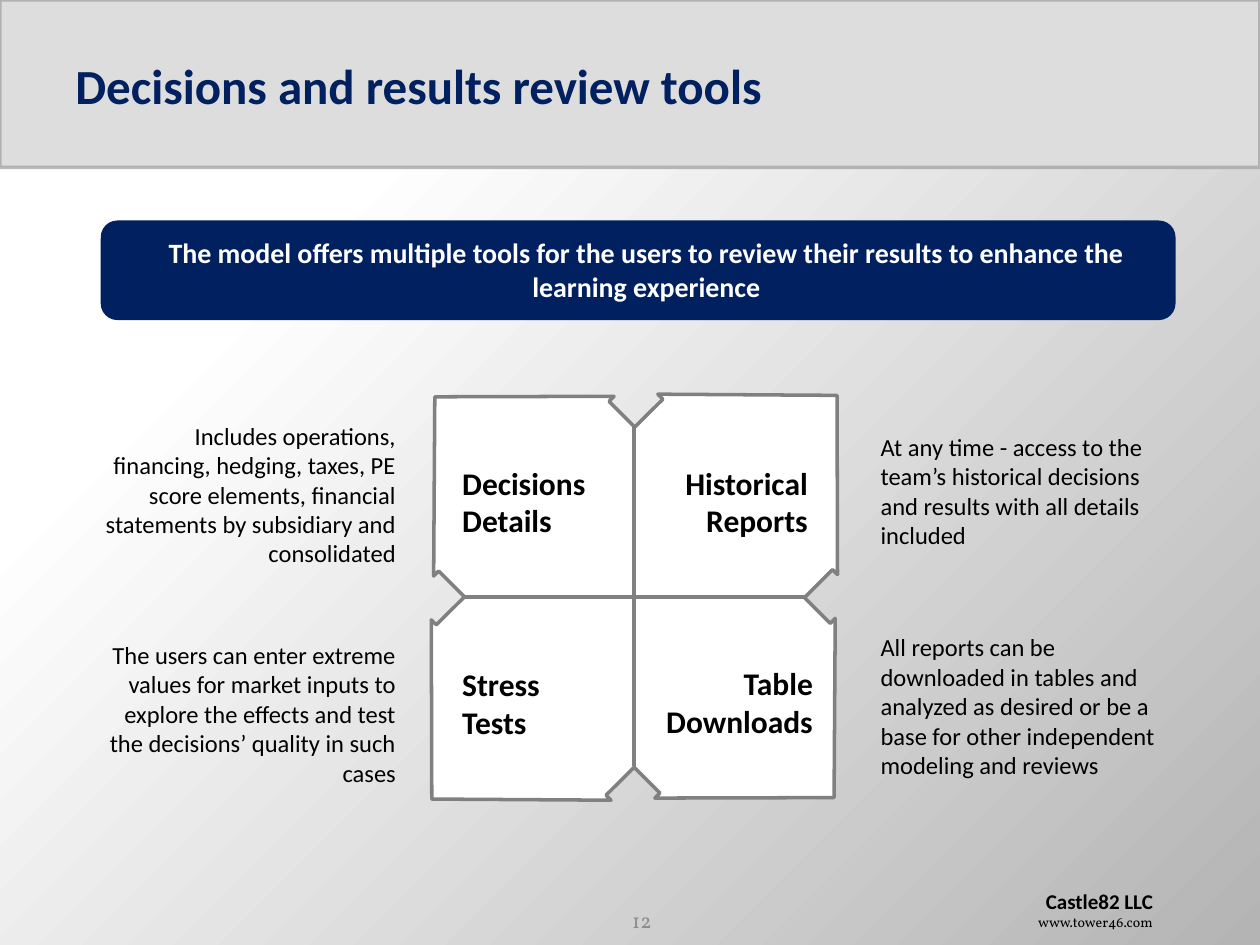
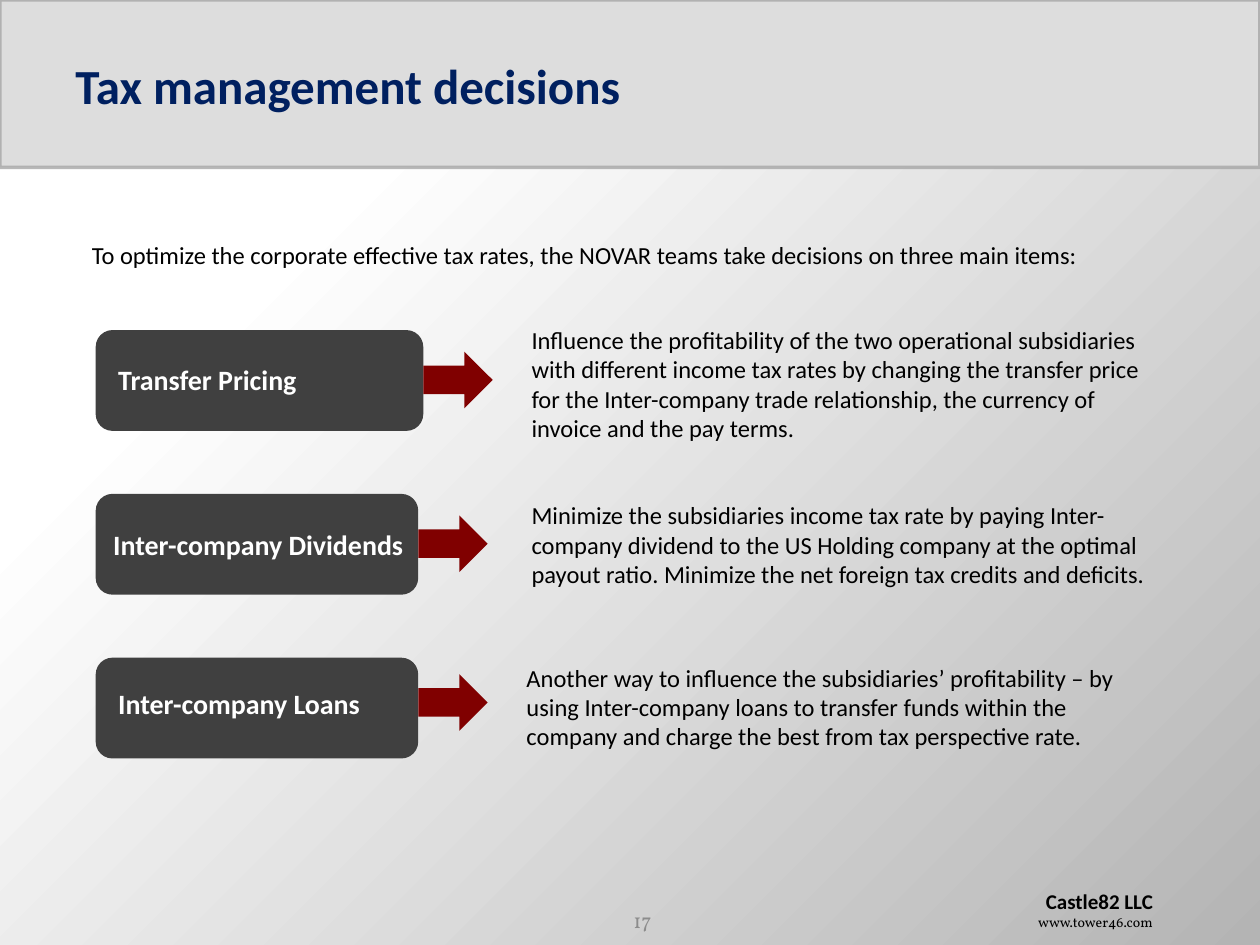
from lxml import etree
from pptx import Presentation
from pptx.dml.color import RGBColor
from pptx.enum import shapes, text
from pptx.oxml import parse_xml
from pptx.oxml.ns import nsdecls, qn
from pptx.util import Inches, Pt

# Shared look
NAVY = RGBColor(0x00, 0x20, 0x60)
BLACK = RGBColor(0x00, 0x00, 0x00)
WHITE = RGBColor(0xFF, 0xFF, 0xFF)
BAND_FILL = RGBColor(0xDD, 0xDD, 0xDD)
BAND_EDGE = RGBColor(0xA6, 0xA6, 0xA6)
MID_GREY = RGBColor(0x80, 0x80, 0x80)
NUMBER_GREY = RGBColor(0x8C, 0x8C, 0x8C)
DARK_GREY = RGBColor(0x40, 0x40, 0x40)
DARK_RED = RGBColor(0x80, 0x00, 0x00)
BODY_FONT = "Calibri"
SERIF_FONT = "Vollkorn"
LEFT, CENTER, RIGHT = (text.PP_ALIGN.LEFT, text.PP_ALIGN.CENTER,
                       text.PP_ALIGN.RIGHT)
PRESET = shapes.MSO_SHAPE
BACKGROUND = f"""<p:bg {nsdecls('p', 'a')}><p:bgPr>
<a:gradFill rotWithShape="1"><a:gsLst>
<a:gs pos="24000"><a:srgbClr val="FFFFFF"/></a:gs>
<a:gs pos="100000"><a:srgbClr val="B4B4B4"/></a:gs></a:gsLst>
<a:path path="circle"><a:fillToRect r="100000" b="100000"/></a:path>
</a:gradFill><a:effectLst/></p:bgPr></p:bg>"""

# Content
COMPANY = "Castle82 LLC"
WEB_ADDRESS = "www.tower46.com"

REVIEW_TITLE = "Decisions and results review tools"
REVIEW_MESSAGE = ("The model offers multiple tools for the users to review "
                  "their results to enhance the learning experience")
# Label, its box; description, its box; alignment of label and description
REVIEW_TOOLS = [
    ("Decisions Details", (3.57, 3.63, 1.34, 0.71),
     "Includes operations, financing, hedging, taxes, PE score elements, "
     "financial statements by subsidiary and consolidated",
     (0.72, 3.29, 2.52, 1.28), LEFT, RIGHT),
    ("Historical Reports", (5.17, 3.63, 1.34, 0.71),
     "At any time - access to the team’s historical decisions and results "
     "with all details included",
     (6.89, 3.38, 2.52, 1.04), RIGHT, LEFT),
    ("Stress Tests", (3.57, 5.23, 1.34, 0.71),
     "The users can enter extreme values for market inputs to explore the "
     "effects and test the decisions’ quality in such cases",
     (0.72, 5.03, 2.52, 1.28), LEFT, RIGHT),
    ("Table Downloads", (5.04, 5.22, 1.51, 0.71),
     "All reports can be downloaded in tables and analyzed as desired or be "
     "a base for other independent modeling and reviews",
     (6.89, 4.97, 2.52, 1.28), RIGHT, LEFT),
]

TAX_TITLE = "Tax management decisions"
TAX_INTRO = ("To optimize the corporate effective tax rates, the NOVAR teams "
             "take decisions on three main items:")
# Label, its left and top; width of its plate; arrow top;
# description, its left, top and height
TAX_DECISIONS = [
    ("Transfer Pricing", 0.84, 2.83, 2.6, 2.79,
     "Influence the profitability of the two operational subsidiaries with "
     "different income tax rates by changing the transfer price for the "
     "Inter-company trade relationship, the currency of invoice and the pay "
     "terms.", 4.12, 2.53, 1.04),
    ("Inter-company Dividends", 0.8, 4.14, 2.56, 4.09,
     "Minimize the subsidiaries income tax rate by paying Inter-company "
     "dividend to the US Holding company at the optimal payout ratio. "
     "Minimize the net foreign tax credits and deficits.", 4.12, 3.92, 0.81),
    ("Inter-company Loans", 0.84, 5.4, 2.56, 5.35,
     "Another way to influence the subsidiaries’ profitability – by using "
     "Inter-company loans to transfer funds within the company and charge "
     "the best from tax perspective rate.", 4.08, 5.21, 0.81),
]
PLATE_LEFT, PLATE_TOP, PLATE_HEIGHT, PLATE_STEP = 0.76, 2.62, 0.8, 1.3


def inches(box):
    return [Inches(length) for length in box]


def add_paragraph(paragraph, words, size=14, bold=False, color=BLACK,
                  font=BODY_FONT, align=LEFT):
    paragraph.alignment = align
    run = paragraph.add_run()
    run.text = words
    run.font.name = font
    run.font.size = Pt(size)
    run.font.bold = bold
    run.font.color.rgb = color


def add_text(slide, words, box, anchor=text.MSO_ANCHOR.TOP, **style):
    frame = slide.shapes.add_textbox(*inches(box)).text_frame
    frame.word_wrap = True
    frame.vertical_anchor = anchor
    add_paragraph(frame.paragraphs[0], words, **style)
    return frame


def add_preset(slide, preset, box, fill, edge=None, width=2):
    shape = slide.shapes.add_shape(preset, *inches(box))
    shape.shadow.inherit = False
    shape.fill.solid()
    shape.fill.fore_color.rgb = fill
    if edge is None:
        shape.line.fill.background()
    else:
        shape.line.color.rgb = edge
        shape.line.width = Pt(width)
    return shape


def add_line(slide, ends, color, width):
    line = slide.shapes.add_connector(shapes.MSO_CONNECTOR.STRAIGHT,
                                      *inches(ends))
    line.line.color.rgb = color
    line.line.width = Pt(width)
    etree.SubElement(line._element.spPr, qn("a:effectLst"))


def add_framed_slide(deck, title, number):
    """Blank slide with background, title band, footer and page number."""
    slide = deck.slides.add_slide(deck.slide_layouts[6])
    slide._element.cSld.insert(0, parse_xml(BACKGROUND))
    middle = text.MSO_ANCHOR.MIDDLE

    band = add_preset(slide, PRESET.RECTANGLE, (0, 0, 10, 1.33),
                      BAND_FILL, BAND_EDGE)
    edge_color = band.line._ln.find(".//" + qn("a:srgbClr"))
    etree.SubElement(edge_color, qn("a:alpha"), val="78000")

    footer = add_text(slide, COMPANY, (8, 7, 1.25, 0.44), size=12, bold=True,
                      align=RIGHT)
    add_paragraph(footer.add_paragraph(), WEB_ADDRESS, size=8,
                  font=SERIF_FONT, align=RIGHT)
    add_text(slide, title, (0.5, 0.05, 9, 1.25), anchor=middle, size=28,
             bold=True, color=NAVY)
    add_text(slide, str(number), (4.73, 7.1, 0.54, 0.4), anchor=middle,
             size=12, color=NUMBER_GREY, font=SERIF_FONT, align=RIGHT)
    return slide


def build_review_slide(deck):
    slide = add_framed_slide(deck, REVIEW_TITLE, 12)

    # Four-part figure: turned arrow cross with dividing lines
    cross = add_preset(slide, PRESET.QUAD_ARROW, (2.79, 2.47, 4.49, 4.54),
                       WHITE, MID_GREY)
    cross.rotation = 45.1
    for index, value in enumerate((0.425, 0.225, 0.223)):
        cross.adjustments[index] = value
    for ends in ((5.03, 3.37, 5.03, 6.08), (6.39, 4.74, 3.69, 4.74)):
        add_line(slide, ends, MID_GREY, 2.5)

    # Labels in the quarters, descriptions beside them
    for (label, label_box, description, description_box,
         label_align, description_align) in REVIEW_TOOLS:
        add_text(slide, label, label_box, size=18, bold=True,
                 align=label_align)
        add_text(slide, description, description_box,
                 align=description_align)

    # Message banner
    add_preset(slide, PRESET.ROUNDED_RECTANGLE, (0.8, 1.75, 8.53, 0.79), NAVY)
    add_text(slide, REVIEW_MESSAGE, (1.14, 1.82, 7.98, 0.8), size=16,
             bold=True, color=WHITE, align=CENTER)


def build_tax_slide(deck):
    slide = add_framed_slide(deck, TAX_TITLE, 17)
    add_text(slide, TAX_INTRO, (0.63, 1.86, 8.48, 0.34))

    # One row per decision: plate, arrow, description
    for row, (label, label_left, label_top, plate_width, arrow_top,
              description, left, top, height) in enumerate(TAX_DECISIONS):
        plate_top = PLATE_TOP + row * PLATE_STEP
        add_preset(slide, PRESET.ROUNDED_RECTANGLE,
                   (PLATE_LEFT, plate_top, plate_width, PLATE_HEIGHT),
                   DARK_GREY)
        add_preset(slide, PRESET.RIGHT_ARROW,
                   (PLATE_LEFT + plate_width, arrow_top, 0.55, 0.45),
                   DARK_RED)
        add_text(slide, label, (label_left, label_top, 2.94, 0.37), size=16,
                 bold=True, color=WHITE)
        add_text(slide, description, (left, top, 5.21, height))


def main():
    deck = Presentation()
    deck.slide_width, deck.slide_height = Inches(10), Inches(7.5)
    build_review_slide(deck)
    build_tax_slide(deck)
    deck.save("out.pptx")


if __name__ == "__main__":
    main()
